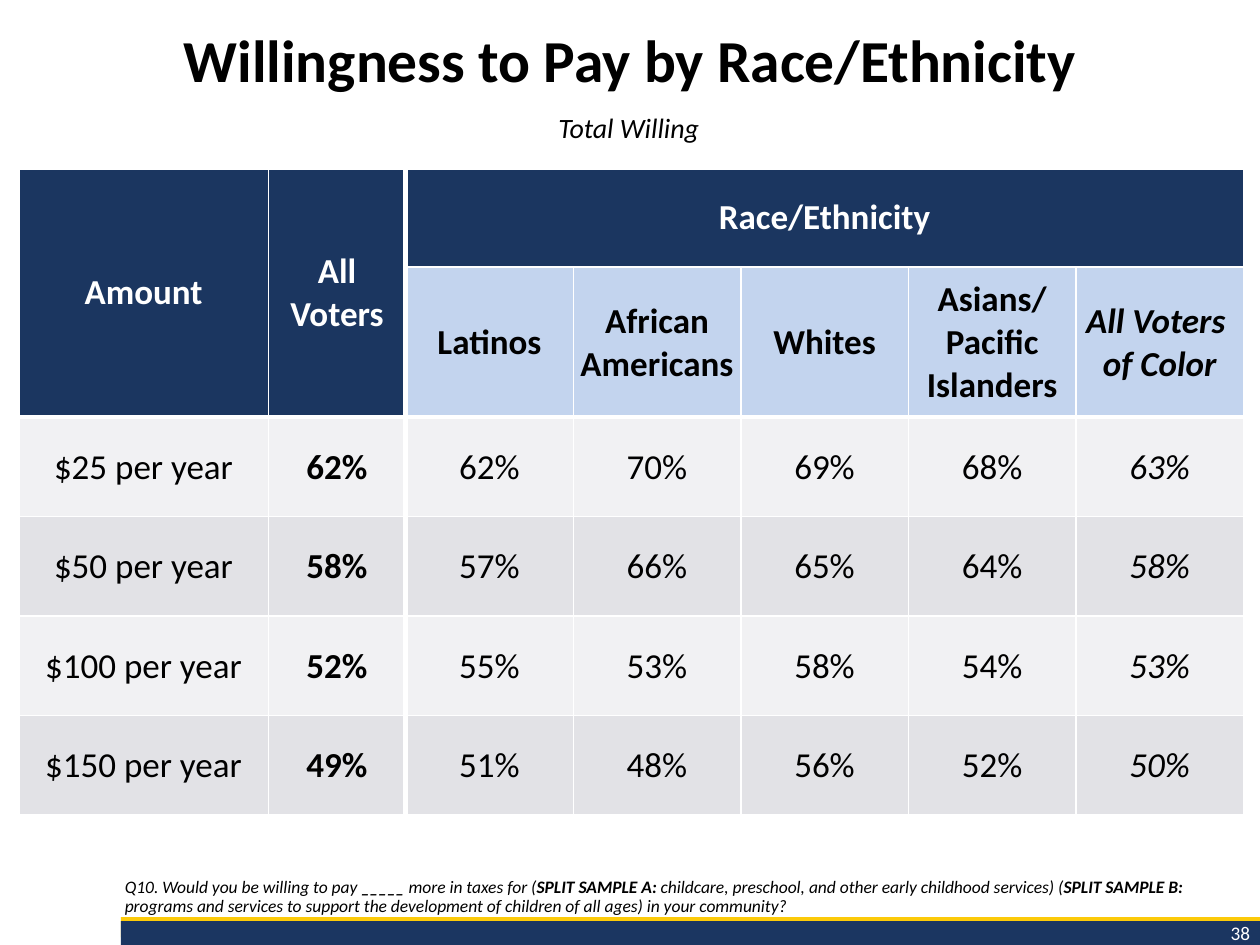
import pptx
import pptx.dml.color
import pptx.enum.shapes
import pptx.enum.text
import pptx.oxml
import pptx.oxml.ns
import pptx.util
from pptx.util import Inches

COLORS = {
    "navy": "1B3661", "header": "1B3660", "gold": "FCCA09", "group": "C3D4EE",
    "light": "F1F1F3", "dark": "E2E2E6", "white": "FFFFFF", "black": "000000",
}
TITLE = "Willingness to Pay by Race/Ethnicity"
SUBTITLE = "Total Willing"
NOTE = (
    "Q10. Would you be willing to pay *_____ *more in taxes for (*SPLIT SAMPLE A:* childcare, "
    "preschool, and other early childhood services) (*SPLIT SAMPLE B:* programs and services to "
    "support the development of children of all ages) in your community?"
)
PAGE_NUMBER = "38"
ROWS = [
    ["Amount", "All Voters", "Race/Ethnicity", "", "", "", ""],
    ["", "", "Latinos", "African Americans", "Whites", "Asians/\nPacific Islanders",
     "All Voters \vof Color"],
    ["$25 per year", "62%", "62%", "70%", "69%", "68%", "63%"],
    ["$50 per year", "58%", "57%", "66%", "65%", "64%", "58%"],
    ["$100 per year", "52%", "55%", "53%", "58%", "54%", "53%"],
    ["$150 per year", "49%", "51%", "48%", "56%", "52%", "50%"],
]
WIDTHS = [1.98, 1.09] + [1.33] * 5
HEIGHTS = [0.78, 1.19] + [0.79] * 4
MERGES = [((0, 0), (1, 0)), ((0, 1), (1, 1)), ((0, 2), (0, 6))]
BARS = [(7.28, 0.16, "gold"), (7.31, 0.19, "navy")]

ALIGN = pptx.enum.text.PP_ALIGN
ANCHOR = pptx.enum.text.MSO_ANCHOR


def rgb(name):
    return pptx.dml.color.RGBColor.from_string(COLORS[name])


def write(frame, text, size=20, color="black", bold=False, italic=False,
          align=ALIGN.CENTER, spacing=None):
    for index, line in enumerate(text.split("\n")):
        para = frame.paragraphs[0] if index == 0 else frame.add_paragraph()
        para.alignment = align
        para.space_before = pptx.util.Pt(0)
        if spacing:
            para.line_spacing = spacing
        for part, words in enumerate(line.split("*")):
            for row, piece in enumerate(words.split("\v")):
                if row:
                    para.add_line_break()
                span = para.add_run()
                span.text = piece
                span.font.name = "Calibri"
                span.font.size = pptx.util.Pt(size)
                span.font.bold = bold or part % 2 == 1
                span.font.italic = italic
                span.font.color.rgb = rgb(color)


def place(box, left, top, width, height, anchor=ANCHOR.TOP):
    box.left, box.top = Inches(left), Inches(top)
    box.width, box.height = Inches(width), Inches(height)
    frame = box.text_frame
    frame.word_wrap = True
    frame.auto_size = pptx.enum.text.MSO_AUTO_SIZE.NONE
    frame.vertical_anchor = anchor
    return frame


def set_borders(cell, **points):
    properties = cell._tc.get_or_add_tcPr()
    for index, side in enumerate("LRTB"):
        line = pptx.oxml.parse_xml(
            f'<a:ln{side} {pptx.oxml.ns.nsdecls("a")} w="{pptx.util.Pt(points.get(side, 1))}">'
            f'<a:solidFill><a:srgbClr val="{COLORS["white"]}"/></a:solidFill></a:ln{side}>')
        properties.insert(index, line)


def set_margins(cell, left, top, right, bottom):
    cell.margin_left, cell.margin_top = Inches(left), Inches(top)
    cell.margin_right, cell.margin_bottom = Inches(right), Inches(bottom)


def add_bars(page):
    for top, height, color in BARS:
        bar = page.shapes.add_shape(pptx.enum.shapes.MSO_SHAPE.RECTANGLE,
                                    Inches(0.96), Inches(top), Inches(9.04), Inches(height))
        bar.shadow.inherit = False
        bar.fill.solid()
        bar.fill.fore_color.rgb = rgb(color)
        bar.line.fill.background()


def add_text(page, text, position, **style):
    box = page.shapes.add_textbox(0, 0, 0, 0)
    write(place(box, *position), text, **style)


def format_cell(cell, text, row, column):
    heading = row == 0 or (row == 1 and column < 2)
    if heading:
        fill = "header"
    elif row == 1:
        fill = "group"
    else:
        fill = "dark" if row % 2 else "light"
    cell.fill.solid()
    cell.fill.fore_color.rgb = rgb(fill)
    cell.vertical_anchor = ANCHOR.MIDDLE
    if not heading:
        set_margins(cell, 0.01, 0.01, 0.01, 0)
    elif column == 1:
        set_margins(cell, 0, 0, 0, 0)
    elif column > 1:
        set_margins(cell, 0.1, 0, 0.1, 0)
    set_borders(cell,
                L=3 if column == 2 else 1,
                R=3 if column == 1 else 1,
                T=3 if row == 2 and column > 1 else 1,
                B=3 if row == 1 or (row == 0 and column < 2) else 1)
    if text:
        write(cell.text_frame, text, color="white" if heading else "black",
              bold=row < 2 or column == 1, italic=row > 0 and column == 6)


def add_results(page):
    frame = page.shapes.add_table(len(ROWS), len(WIDTHS), Inches(0.15), Inches(1.34),
                                  Inches(sum(WIDTHS)), Inches(sum(HEIGHTS)))
    table = frame.table
    table.first_row = table.horz_banding = False
    for column, width in zip(table.columns, WIDTHS):
        column.width = Inches(width)
    for row, height in zip(table.rows, HEIGHTS):
        row.height = Inches(height)
    for first, last in MERGES:
        table.cell(*first).merge(table.cell(*last))
    for row, values in enumerate(ROWS):
        for column, text in enumerate(values):
            format_cell(table.cell(row, column), text, row, column)


def main():
    deck = pptx.Presentation()
    deck.slide_width, deck.slide_height = Inches(10), Inches(7.5)
    page = deck.slides.add_slide(deck.slide_layouts[1])
    add_bars(page)
    add_text(page, PAGE_NUMBER, (8.54, 7.26, 1.48, 0.29), size=11, color="white",
             align=ALIGN.RIGHT)
    note = place(page.placeholders[1], 0.89, 6.78, 9.09, 0.54, ANCHOR.BOTTOM)
    properties = note.paragraphs[0]._p.get_or_add_pPr()
    properties.set("marL", "0")
    properties.set("indent", "0")
    properties.append(pptx.oxml.parse_xml(f'<a:buNone {pptx.oxml.ns.nsdecls("a")}/>'))
    write(note, NOTE, size=10, italic=True, align=ALIGN.LEFT, spacing=0.9)
    add_results(page)
    title = place(page.shapes.title, 0, 0.2, 10, 0.69)
    write(title, TITLE, size=34, bold=True, spacing=0.9)
    add_text(page, SUBTITLE, (0, 0.83, 9.98, 0.37), size=16, italic=True)
    deck.save("out.pptx")


if __name__ == "__main__":
    main()
